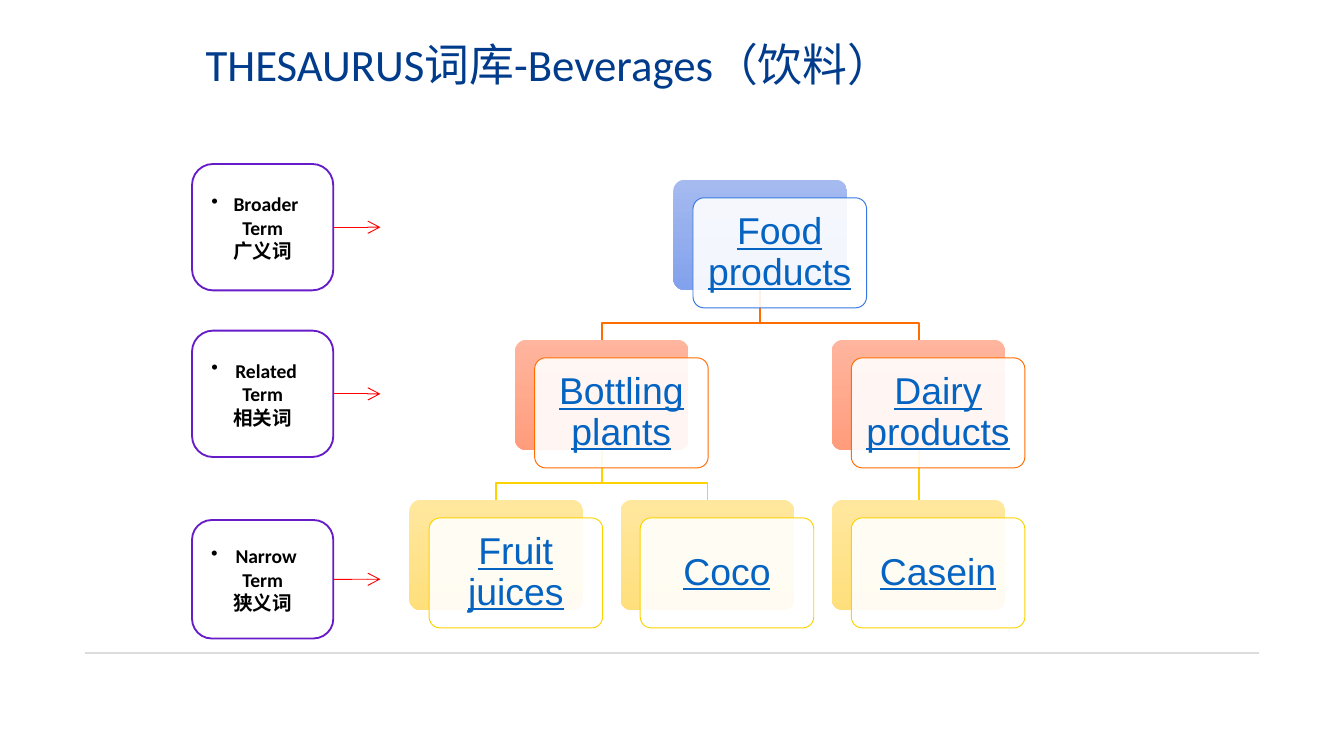
from pptx import Presentation
from pptx.dml.color import RGBColor as RGB
from pptx.enum.shapes import MSO_CONNECTOR as Link, MSO_SHAPE as Form
from pptx.enum.text import MSO_ANCHOR as Anchor, PP_ALIGN as Align
from pptx.oxml.ns import qn
from pptx.util import Cm, Pt
from lxml.etree import SubElement as Sub

WHITE = RGB(0xFF, 0xFF, 0xFF)
BLACK = RGB(0x00, 0x00, 0x00)
NAVY = RGB(0x00, 0x3C, 0x8B)
PURPLE = RGB(0x66, 0x1C, 0xC9)
RED = RGB(0xFF, 0x00, 0x00)
GREY = RGB(0xDC, 0xDC, 0xDC)
LINK = RGB(0x05, 0x63, 0xC1)
BLUE = RGB(0x36, 0x78, 0xDF)
ORANGE = RGB(0xFF, 0x6C, 0x00)
YELLOW = RGB(0xFC, 0xD3, 0x00)

LEVELS = [
    (BLUE, RGB(0xA5, 0xBA, 0xEF), RGB(0x83, 0xA2, 0xED)),
    (ORANGE, RGB(0xFF, 0xB5, 0x9E), RGB(0xFF, 0x9C, 0x7C)),
    (YELLOW, RGB(0xFF, 0xE7, 0x9E), RGB(0xFF, 0xDF, 0x7C)),
]
NODES = {
    "Food products": (1.25, 0, None),
    "Bottling plants": (0.5, 1, "Food products"),
    "Fruit juices": (0, 2, "Bottling plants"),
    "Coco": (1, 2, "Bottling plants"),
    "Dairy products": (2, 1, "Food products"),
    "Casein": (2, 2, "Dairy products"),
}
TERMS = [
    ("Broader\vTerm\v广义词", 3.1, 2.39),
    ("Related Term\v相关词", 6.25, 2.39),
    ("Narrow Term\v狭义词", 9.83, 2.24),
]
TITLE_FONT = {"name": "Calibri", "size": Pt(24)}
TERM_FONT = {"name": "Calibri", "size": Pt(10.5), "bold": True}
NODE_FONT = {"name": "Arial", "size": Pt(20), "underline": True}
MIDDLE = {"word_wrap": True, "vertical_anchor": Anchor.MIDDLE}


def put(obj, vals):
    for key, val in vals.items():
        setattr(obj, key, val)


def style(font, vals, color):
    put(font, vals)
    font.color.rgb = color


def stroke(line, color, width):
    line.color.rgb = color
    line.width = Pt(width)


def add_line(slide, start, end, color, width):
    line = slide.shapes.add_connector(Link.STRAIGHT, *map(Cm, start + end))
    Sub(line._element.spPr, qn("a:effectLst"))
    stroke(line.line, color, width)
    return line


def add_box(slide, box, adjust):
    shape = slide.shapes.add_shape(Form.ROUNDED_RECTANGLE, *map(Cm, box))
    shape.shadow.inherit = False
    shape.adjustments[0] = adjust
    return shape


def add_title(slide, box):
    title = slide.shapes.title
    put(title, dict(zip(("left", "top", "width", "height"), map(Cm, box))))
    frame = title.text_frame
    put(frame, {**MIDDLE, "margin_top": 0, "margin_bottom": 0})
    para = frame.paragraphs[0]
    para.text = "THESAURUS词库-Beverages（饮料）"
    para.alignment = Align.LEFT
    style(para.font, TITLE_FONT, NAVY)


def add_term(slide, text, box):
    left, top, width, height = box
    shape = add_box(slide, box, 0.1667)
    shape.fill.solid()
    shape.fill.fore_color.rgb = WHITE
    stroke(shape.line, PURPLE, 1)
    put(shape.text_frame, MIDDLE)
    para = shape.text_frame.paragraphs[0]
    para.text = text
    para.alignment = Align.CENTER
    props = para._p.get_or_add_pPr()
    put_bullet = Sub(props, qn("a:buChar"))
    put_bullet.set("char", "•")
    style(para.font, TERM_FONT, BLACK)
    mid = top + height / 2
    edge = left + width
    arrow = add_line(slide, (edge, mid), (edge + 0.89, mid), RED, 0.5)
    arrow.begin_connect(shape, 3)
    Sub(arrow.line._get_or_add_ln(), qn("a:tailEnd")).set("type", "arrow")


def add_card(slide, text, box, level):
    left, top, width, height = box
    color, light, dark = LEVELS[level]
    back = add_box(slide, box, 0.1)
    back.line.fill.background()
    back.fill.gradient()
    back.fill.gradient_angle = 270
    for stop, tint in zip(back.fill.gradient_stops, (light, dark)):
        stop.color.rgb = tint
    front = add_box(slide, (left + 0.37, top + 0.34, width, height), 0.1)
    front.fill.solid()
    front.fill.fore_color.rgb = WHITE
    white = front._element.spPr.find(qn("a:solidFill"))[0]
    Sub(white, qn("a:alpha")).set("val", "90000")
    stroke(front.line, color, 0.5)
    frame = front.text_frame
    sides = ("left", "top", "right", "bottom")
    put(frame, {**MIDDLE, **{f"margin_{side}": Cm(0.2) for side in sides}})
    para = frame.paragraphs[0]
    para.text = text
    put(para, {"alignment": Align.CENTER, "line_spacing": 0.9})
    style(para.font, NODE_FONT, LINK)
    return back


def add_branch(slide, start, end, color):
    bend = start[1] + 0.63
    points = [start, (start[0], bend), (end[0], bend), end]
    first, *rest = [tuple(map(Cm, point)) for point in points]
    pen = slide.shapes.build_freeform(*first)
    pen.add_line_segments(rest, close=False)
    shape = pen.convert_to_shape()
    shape.shadow.inherit = False
    shape.fill.background()
    stroke(shape.line, color, 1)


def add_tree(slide, box):
    left, top, width, height = box
    wide, high = 3.28, 2.08
    step = (width - wide) / 2
    drop = (height - high) / 2
    spots = {
        name: (left + col * step, top + level * drop, wide, high)
        for name, (col, level, _) in NODES.items()
    }
    joins = []
    for name, (col, level, parent) in NODES.items():
        if parent is None:
            continue
        above, below = spots[parent], spots[name]
        start = (above[0] + wide / 2, above[1] + high)
        end = (below[0] + wide / 2, below[1])
        color = LEVELS[level][0]
        if col == NODES[parent][0]:
            joins.append((add_line(slide, start, end, color, 1), parent, name))
        else:
            add_branch(slide, start, end, color)
    cards = {
        name: add_card(slide, name, spots[name], level)
        for name, (_, level, _) in NODES.items()
    }
    for line, parent, name in joins:
        line.begin_connect(cards[parent], 2)
        line.end_connect(cards[name], 0)


def main():
    deck = Presentation()
    put(deck, {"slide_width": Cm(25.4), "slide_height": Cm(14.29)})
    slide = deck.slides.add_slide(deck.slide_layouts[5])
    add_line(slide, (1.6, 12.34), (23.8, 12.34), GREY, 1)
    add_title(slide, (3.63, 0.61, 18.42, 1.19))
    for text, top, height in TERMS:
        add_term(slide, text, (3.63, top, 2.67, height))
    add_tree(slide, (7.74, 3.4, 11.26, 8.13))
    deck.save("out.pptx")


if __name__ == "__main__":
    main()
